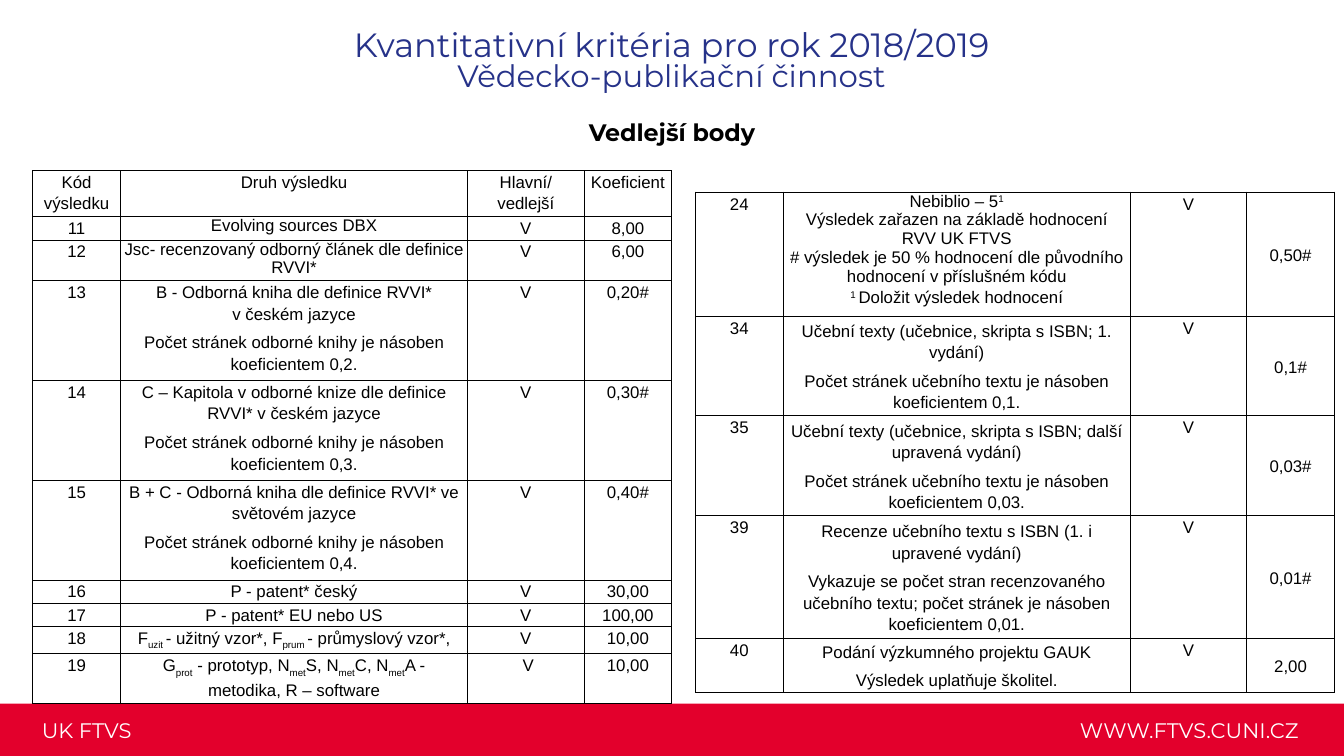
from lxml.etree import SubElement
from pptx import Presentation
from pptx.dml.color import RGBColor
from pptx.enum.shapes import MSO_SHAPE
from pptx.enum.text import MSO_ANCHOR, PP_ALIGN
from pptx.oxml.ns import qn
from pptx.util import Inches, Pt

# Content: _x_ is subscript, ^x^ is superscript, a leading ~ is a tight paragraph
TITLE = [("Kvantitativní kritéria pro rok 2018/2019", 48),
         ("Vědecko-publikační činnost", 44)]
HEADING = "Vedlejší body"
SITE, SCHOOL = "WWW.FTVS.CUNI.CZ", "UK FTVS"
BOOK = "Počet stránek odborné knihy je násoben koeficientem "
COURSE = "Počet stránek učebního textu je násoben koeficientem "

# Each row: height, code, paragraphs, main or side, coefficient
LEFT = [
    (0.92, "Kód výsledku", ["Druh výsledku"], "Hlavní/vedlejší", "Koeficient"),
    (0.46, "11", ["~Evolving sources DBX"], "V", "8,00"),
    (0.81, "12", ["~Jsc- recenzovaný odborný článek dle definice RVVI*"], "V", "6,00"),
    (1.97, "13", ["B - Odborná kniha dle definice RVVI* v českém jazyce",
                  BOOK + "0,2."], "V", "0,20#"),
    (1.97, "14", ["C – Kapitola v odborné knize dle definice RVVI* v českém jazyce",
                  BOOK + "0,3."], "V", "0,30#"),
    (1.97, "15", ["B + C - Odborná kniha dle definice RVVI* ve světovém jazyce",
                  BOOK + "0,4."], "V", "0,40#"),
    (0.46, "16", ["P - patent* český"], "V", "30,00"),
    (0.46, "17", ["P - patent* EU nebo US"], "V", "100,00"),
    (0.54, "18", ["F_uzit _- užitný vzor*, F_prum _- průmyslový vzor*,"], "V", "10,00"),
    (0.96, "19", ["G_prot_ - prototyp, N_met_S, N_met_C, N_met_A - metodika, R – software"],
     " V", "10,00"),
]
RIGHT = [
    (2.46, "24", ["~Nebiblio – 5^1^",
                  "~Výsledek zařazen na základě hodnocení RVV UK FTVS",
                  "~# výsledek je 50 % hodnocení dle původního hodnocení v příslušném kódu",
                  "^1 ^Doložit výsledek hodnocení"], "V", "0,50#"),
    (1.97, "34", ["Učební texty (učebnice, skripta s ISBN; 1. vydání)",
                  COURSE + "0,1."], "V", "0,1#"),
    (1.98, "35", ["Učební texty (učebnice, skripta s ISBN; další upravená vydání)",
                  COURSE + "0,03."], "V", "0,03#"),
    (2.44, "39", ["Recenze učebního textu s ISBN (1. i upravené vydání)",
                  "Vykazuje se počet stran recenzovaného učebního textu; "
                  "počet stránek je násoben koeficientem 0,01."], "V", "0,01#"),
    (1.05, "40", ["Podání výzkumného projektu GAUK",
                  "Výsledek uplatňuje školitel."], "V", "2,00"),
]
COLS = [1.74, 6.89, 2.31, 1.74]
RED, BLUE, BLACK, WHITE = "E3002C", "263289", "000000", "FFFFFF"
SHIFT = {"_": "-25000", "^": "30000"}
LOOSE = {"line_spacing": 1.15, "space_after": Pt(10)}
TIGHT = {"line_spacing": 1.0, "space_after": Pt(0)}
TOP, MID = MSO_ANCHOR.TOP, MSO_ANCHOR.MIDDLE
HARD = chr(160)  # non-breaking space


def tint(color):
    return RGBColor.from_string(color)


def apply(item, values):
    for key, value in values.items():
        setattr(item, key, value)


def pad(item, x, y):
    apply(item, {"margin_left": x, "margin_right": x,
                 "margin_top": y, "margin_bottom": y})


def add_run(para, text, size, color, face="Montserrat", bold=False):
    run = para.add_run()
    run.text = text
    apply(run.font, {"size": Pt(size), "name": face, "bold": bold})
    run.font.color.rgb = tint(color)
    return run


def write(shape, lines, color, align, bold=False, **style):
    frame = shape.text_frame
    apply(frame, {"word_wrap": True, "vertical_anchor": MID})
    pad(frame, Inches(0.06), Inches(0.06))
    for n, (text, size) in enumerate(lines):
        para = frame.add_paragraph() if n else frame.paragraphs[0]
        apply(para, {"alignment": align, "space_before": Pt(0), **style})
        add_run(para, text, size, color, bold=bold)


def add_box(slide, area, *args, **style):
    write(slide.shapes.add_textbox(*map(Inches, area)), *args, **style)


def edge(cell):
    props = cell._tc.get_or_add_tcPr()
    for side in "LRTB":
        line = SubElement(props, qn("a:ln" + side), w=str(Pt(1)))
        SubElement(SubElement(line, qn("a:solidFill")), qn("a:srgbClr"), val=BLACK)
    cell.fill.background()


def fill_cell(cell, paras, anchor):
    edge(cell)
    pad(cell, Pt(5.4), 0)
    cell.vertical_anchor = anchor
    frame = cell.text_frame
    for n, text in enumerate(paras):
        para = frame.add_paragraph() if n else frame.paragraphs[0]
        apply(para, TIGHT if text.startswith("~") else LOOSE)
        para.alignment = PP_ALIGN.CENTER
        mark = "^" if "^" in text else "_"
        # The preposition v stays with the next word
        text = text.lstrip("~").replace(" v ", " v" + HARD)
        for k, part in enumerate(text.split(mark)):
            if part:
                run = add_run(para, part, 24, BLACK, "Arial")
                if k % 2:
                    run.font._element.set("baseline", SHIFT[mark])


def add_grid(slide, x, y, rows, anchors):
    size = sum(COLS), sum(row[0] for row in rows)
    table = slide.shapes.add_table(len(rows), len(COLS),
                                   *map(Inches, (x, y, *size))).table
    apply(table, {"first_row": False, "horz_banding": False})
    for col, width in zip(table.columns, COLS):
        col.width = Inches(width)
    for r, (height, code, paras, kind, rate) in enumerate(rows):
        table.rows[r].height = Inches(height)
        texts = [code], paras, [kind], [rate]
        for c, (text, anchor) in enumerate(zip(texts, anchors)):
            # The long first row on the right stays at the top
            top = c == 1 and len(text) > 2
            fill_cell(table.cell(r, c), text, TOP if top else anchor)


def main():
    deck = Presentation()
    apply(deck, {"slide_width": Inches(26.67), "slide_height": Inches(15)})
    slide = deck.slides.add_slide(deck.slide_layouts[5])

    # Footer band
    band = slide.shapes.add_shape(MSO_SHAPE.RECTANGLE,
                                  *map(Inches, (-0.03, 13.96, 26.72, 1.06)))
    band.shadow.inherit = False
    band.fill.solid()
    band.fill.fore_color.rgb = tint(RED)
    band.line.fill.background()
    for x, text, align in [(18.76, SITE, PP_ALIGN.RIGHT), (0.77, SCHOOL, PP_ALIGN.LEFT)]:
        add_box(slide, (x, 14.18, 7.07, 0.61), [(text, 30)], WHITE, align)

    # Title and heading
    title = slide.shapes.title
    apply(title, {"left": Inches(2.1), "top": Inches(0.56),
                  "width": Inches(22.46), "height": Inches(1.35)})
    write(title, TITLE, BLUE, PP_ALIGN.CENTER, line_spacing=0.8)
    add_box(slide, (1.51, 2.26, 23.65, 0.7), [(HEADING, 34)], BLACK,
            PP_ALIGN.CENTER, bold=True)

    # Tables
    add_grid(slide, 0.65, 3.38, LEFT, [TOP] * 4)
    add_grid(slide, 13.8, 3.81, RIGHT, [TOP, MID, TOP, MID])
    deck.save("out.pptx")


if __name__ == "__main__":
    main()
